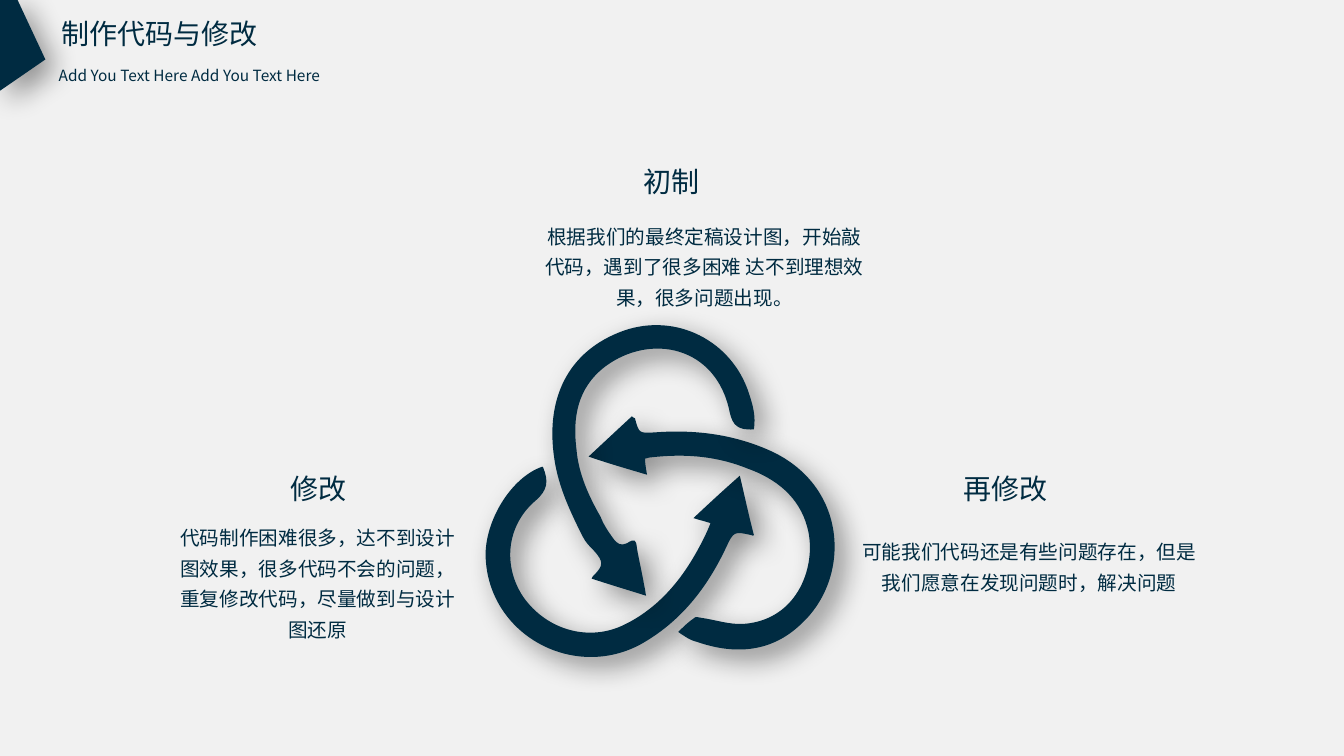
from dataclasses import dataclass

import lxml.etree
import pptx
import pptx.dml.color
import pptx.enum.text
import pptx.oxml.ns
import pptx.util

Cm = pptx.util.Cm
Pt = pptx.util.Pt
RGB = pptx.dml.color.RGBColor
ALIGN = pptx.enum.text.PP_ALIGN
FIT_TEXT = pptx.enum.text.MSO_AUTO_SIZE.SHAPE_TO_FIT_TEXT
qn = pptx.oxml.ns.qn


@dataclass(frozen=True)
class Theme:
    navy: RGB = RGB(0x00, 0x2B, 0x41)
    paper: RGB = RGB(0xF1, 0xF1, 0xF1)
    shadow: str = "000000"
    font: str = "Noto Sans CJK SC"
    heading: int = 20
    body: int = 14
    caption: int = 11


@dataclass(frozen=True)
class Label:
    text: str
    left: float
    top: float
    width: float
    height: float
    size: int
    align: ALIGN = ALIGN.CENTER
    spacing: float | None = None
    wrap: bool = True


@dataclass(frozen=True)
class Outline:
    """A start point, then lines (x, y) and cubic curves (x1, y1, x2, y2, x, y)."""
    start: tuple[int, int]
    segments: list[tuple[int, ...]]


THEME = Theme()
UNIT = Cm(2.54) / 100  # outline grid
HEAD_W, HEAD_H = 3.71, 1.12
LOWER_HEAD_TOP = 11.76
BODY_SPACING = 1.3

# Page title and subtitle, then a heading and a paragraph per step
LABELS = [
    Label("制作代码与修改", 1.3, 0.3, 5.51, HEAD_H, THEME.heading, ALIGN.LEFT, wrap=False),
    Label("Add You Text Here Add You Text Here", 1.23, 1.41, 7.77, 0.81,
          THEME.caption, ALIGN.LEFT, BODY_SPACING),
    Label("初制", 15.07, 4.02, HEAD_W, HEAD_H, THEME.heading),
    Label("根据我们的最终定稿设计图，开始敲代码，遇到了很多困难 达不到理想效果，很多问题出现。",
          13.35, 5.36, 8.81, 2.51, THEME.body, spacing=BODY_SPACING),
    Label("修改", 6.17, LOWER_HEAD_TOP, HEAD_W, HEAD_H, THEME.heading),
    Label("代码制作困难很多，达不到设计图效果，很多代码不会的问题，重复修改代码，尽量做到与设计图还原",
          4.25, 12.95, 7.52, 3.3, THEME.body, spacing=BODY_SPACING),
    Label("再修改", 23.48, LOWER_HEAD_TOP, HEAD_W, HEAD_H, THEME.heading),
    Label("可能我们代码还是有些问题存在，但是我们愿意在发现问题时，解决问题",
          21.42, 13.31, 9.04, 1.73, THEME.body, spacing=BODY_SPACING),
]

CORNER = Outline((17, -1), [(0, -1), (0, 90), (45, 59), (17, -1)])

LEFT_ARROW = Outline((538, 463), [
    (538, 463, 539, 464, 539, 464), (544, 477, 544, 486, 531, 497),
    (502, 522, 499, 562, 519, 592), (542, 625, 584, 637, 619, 620),
    (652, 604, 675, 577, 692, 546), (697, 537, 701, 529, 705, 519),
    (699, 517, 694, 516, 688, 514), (703, 500, 718, 486, 734, 472),
    (739, 493, 743, 512, 748, 531), (746, 531, 746, 532, 746, 531),
    (728, 527, 728, 527, 720, 544), (701, 584, 675, 617, 636, 639),
    (570, 675, 487, 631, 482, 556), (479, 520, 506, 474, 538, 463),
])

RIGHT_ARROW = Outline((584, 453), [
    (599, 439, 613, 426, 627, 413), (628, 414, 629, 415, 630, 415),
    (634, 430, 634, 430, 650, 429), (690, 426, 729, 431, 766, 448),
    (842, 484, 844, 574, 795, 619), (766, 647, 730, 650, 692, 637),
    (688, 636, 683, 634, 679, 631), (677, 630, 676, 629, 673, 627),
    (678, 622, 683, 617, 689, 613), (690, 611, 694, 613, 696, 613),
    (710, 615, 724, 620, 738, 619), (793, 615, 811, 559, 801, 523),
    (793, 493, 770, 475, 742, 465), (710, 452, 678, 450, 644, 454),
    (643, 454, 642, 455, 640, 455), (640, 460, 641, 465, 642, 471),
    (622, 465, 604, 460, 584, 453),
])

TOP_ARROW = Outline((641, 591), [
    (622, 585, 605, 580, 587, 574), (588, 573, 588, 571, 589, 571),
    (599, 561, 599, 557, 589, 546), (585, 542, 581, 538, 578, 532),
    (566, 508, 554, 483, 550, 455), (541, 396, 563, 348, 619, 328),
    (671, 310, 726, 338, 743, 390), (747, 402, 750, 413, 748, 426),
    (732, 427, 727, 422, 724, 409), (711, 343, 645, 330, 600, 364),
    (573, 385, 568, 414, 572, 446), (574, 470, 584, 492, 596, 513),
    (599, 521, 604, 528, 609, 535), (612, 539, 616, 542, 622, 539),
    (630, 534, 631, 535, 632, 544), (634, 556, 637, 568, 639, 580),
    (640, 583, 640, 586, 641, 591),
])


def add_outline(slide, outline: Outline) -> None:
    points = [seg[i:i + 2] for seg in outline.segments for i in range(0, len(seg), 2)]
    builder = slide.shapes.build_freeform(*outline.start, scale=UNIT)
    builder.add_line_segments(points, close=True)
    sp = builder.convert_to_shape()
    # Gather each curve's three points into one cubic segment
    lines = iter(list(sp._element.iter(qn("a:lnTo"))))
    for seg in outline.segments:
        first = next(lines)
        if len(seg) == 6:
            curve = lxml.etree.Element(qn("a:cubicBezTo"))
            first.addprevious(curve)
            for line in (first, next(lines), next(lines)):
                curve.append(line[0])
                line.getparent().remove(line)
    sp.fill.solid()
    sp.fill.fore_color.rgb = THEME.navy
    sp.line.fill.background()
    # Soft shadow towards the lower right
    sp.shadow.inherit = False
    effects = sp._element.spPr.find(qn("a:effectLst"))
    shadow = lxml.etree.SubElement(
        effects, qn("a:outerShdw"), blurRad=str(Pt(20)), dist=str(Pt(10)),
        dir=str(45 * 60000), algn="tl", rotWithShape="0")
    color = lxml.etree.SubElement(shadow, qn("a:srgbClr"), val=THEME.shadow)
    lxml.etree.SubElement(color, qn("a:alpha"), val="40000")


def add_label(slide, label: Label) -> None:
    box = (label.left, label.top, label.width, label.height)
    tf = slide.shapes.add_textbox(*map(Cm, box)).text_frame
    p = tf.paragraphs[0]
    r = p.add_run()
    r.text = label.text
    formats = {
        tf: {"word_wrap": label.wrap, "auto_size": FIT_TEXT},
        p: {"alignment": label.align, "line_spacing": label.spacing},
        r.font: {"name": THEME.font, "size": Pt(label.size)},
    }
    for target, values in formats.items():
        for name, value in values.items():
            setattr(target, name, value)
    r.font.color.rgb = THEME.navy
    # Same typeface for Chinese characters
    lxml.etree.SubElement(r._r.get_or_add_rPr(), qn("a:ea"), typeface=THEME.font)


def main() -> None:
    prs = pptx.Presentation()
    prs.slide_width, prs.slide_height = Cm(33.87), Cm(19.05)
    slide = prs.slides.add_slide(prs.slide_layouts[6])
    slide.background.fill.solid()
    slide.background.fill.fore_color.rgb = THEME.paper

    # Corner mark and the three interlaced arrows
    for outline in (CORNER, LEFT_ARROW, RIGHT_ARROW, TOP_ARROW):
        add_outline(slide, outline)

    # Titles and step texts
    for label in LABELS:
        add_label(slide, label)

    prs.save("out.pptx")


if __name__ == "__main__":
    main()
